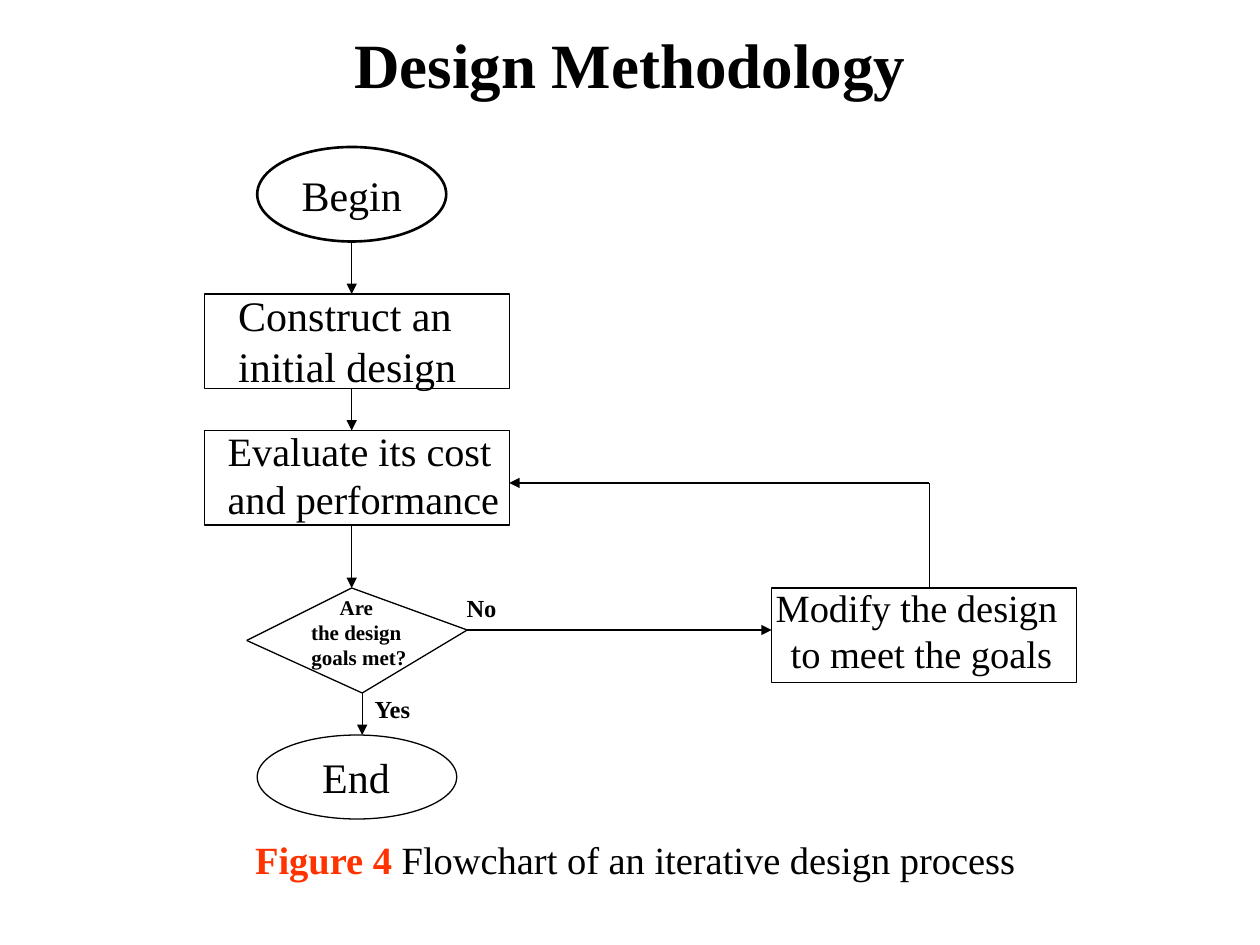
from lxml.etree import SubElement
from pptx import Presentation
from pptx.dml.color import RGBColor
from pptx.enum.shapes import MSO_CONNECTOR, MSO_SHAPE
from pptx.enum.text import MSO_ANCHOR, MSO_AUTO_SIZE, PP_ALIGN
from pptx.oxml.ns import qn
from pptx.util import Emu, Pt

EMU_PER_PX = 9525
BLACK = RGBColor(0x00, 0x00, 0x00)
WHITE = RGBColor(0xFF, 0xFF, 0xFF)
ORANGE_RED = RGBColor(0xFF, 0x33, 0x00)
FONT_NAME = "Times New Roman"


def px(length):
    return Emu(length * EMU_PER_PX)


def format_text(text_frame, size, bold=False, align=PP_ALIGN.LEFT):
    for paragraph in text_frame.paragraphs:
        paragraph.alignment = align
        for run in paragraph.runs:
            run.font.name = FONT_NAME
            run.font.size = Pt(size)
            run.font.bold = bold
            run.font.color.rgb = BLACK


def add_text(slide, box, text, size, bold=False, align=PP_ALIGN.LEFT, wrap=False):
    text_frame = slide.shapes.add_textbox(*map(px, box)).text_frame
    text_frame.text = text
    text_frame.word_wrap = wrap
    text_frame.auto_size = MSO_AUTO_SIZE.SHAPE_TO_FIT_TEXT
    format_text(text_frame, size, bold, align)
    return text_frame


def add_outline(slide, kind, box, line_width=0.75):
    shape = slide.shapes.add_shape(kind, *map(px, box))
    shape.shadow.inherit = False
    shape.fill.background()
    shape.line.color.rgb = BLACK
    shape.line.width = Pt(line_width)
    return shape


def add_line(slide, start, end, arrow=False):
    connector = slide.shapes.add_connector(
        MSO_CONNECTOR.STRAIGHT, *map(px, (*start, *end)))
    connector.line.color.rgb = BLACK
    connector.line.width = Pt(0.75)
    if arrow:
        line = connector.line._get_or_add_ln()
        SubElement(line, qn("a:tailEnd"), type="triangle")
    SubElement(connector._element.spPr, qn("a:effectLst"))


def draw_title(slide, box):
    text_frame = add_text(slide, box, "Design Methodology", 36, True,
                          PP_ALIGN.CENTER, wrap=True)
    text_frame.auto_size = MSO_AUTO_SIZE.NONE
    text_frame.vertical_anchor = MSO_ANCHOR.MIDDLE


def draw_flowchart(slide, left, top):
    def place(x, y, *size):
        return (left + x, top + y, *size)

    # Begin and end
    begin = add_outline(slide, MSO_SHAPE.OVAL, place(40, 0, 144, 72), 1.5)
    begin.fill.solid()
    begin.fill.fore_color.rgb = WHITE
    begin.text_frame.text = "Begin"
    begin.text_frame.word_wrap = False
    begin.text_frame.vertical_anchor = MSO_ANCHOR.MIDDLE
    format_text(begin.text_frame, 24, align=PP_ALIGN.CENTER)
    add_outline(slide, MSO_SHAPE.OVAL, place(40, 448, 152, 64))
    add_text(slide, place(80, 456, 71, 48), "End", 24)

    # Process steps: box corner, text box, wording, size, alignment
    steps = [
        ((0, 112), (16, 104, 190, 86),
         "Construct an\ninitial design", 24, PP_ALIGN.LEFT),
        ((0, 216), (8, 208, 237, 86),
         "Evaluate its cost\nand performance", 23, PP_ALIGN.LEFT),
        ((432, 336), (424, 328, 244, 81),
         "Modify the design \nto meet the goals", 22, PP_ALIGN.CENTER),
    ]
    for corner, text_box, text, size, align in steps:
        add_outline(slide, MSO_SHAPE.RECTANGLE, place(*corner, 232, 72))
        add_text(slide, place(*text_box), text, size, align=align)

    # Decision
    corners = [(32, 376), (112, 336), (200, 368), (120, 416)]
    for start, end in zip(corners, corners[1:] + corners[:1]):
        add_line(slide, place(*start), place(*end))
    add_text(slide, place(71, 336, 93, 68), "Are \nthe design \ngoals met?",
             12, True, PP_ALIGN.CENTER)

    # Arrows down, across and back up to the evaluation
    arrows = [
        ((112, 72), (112, 112)),
        ((112, 184), (112, 216)),
        ((112, 288), (112, 336)),
        ((120, 416), (120, 448)),
        ((200, 368), (432, 368)),
        ((552, 256), (232, 256)),
    ]
    for start, end in arrows:
        add_line(slide, place(*start), place(*end), arrow=True)
    add_line(slide, place(552, 336), place(552, 256))

    # Branch labels
    for x, y, label in [(120, 412, "Yes"), (190, 335, "No")]:
        add_text(slide, place(x, y, 59, 33), label, 14, True, wrap=True)


def draw_caption(slide, box):
    text_frame = add_text(slide, box, "Figure 4", 22, True, PP_ALIGN.CENTER, wrap=True)
    paragraph = text_frame.paragraphs[0]
    paragraph.add_run().text = " Flowchart of an iterative design process"
    format_text(text_frame, 22, align=PP_ALIGN.CENTER)
    label = paragraph.runs[0]
    label.font.bold = True
    label.font.color.rgb = ORANGE_RED


def main():
    presentation = Presentation()
    presentation.slide_width = px(960)
    presentation.slide_height = px(720)
    slide = presentation.slides.add_slide(presentation.slide_layouts[6])
    draw_title(slide, (72, 16, 816, 64))
    draw_flowchart(slide, 156, 112)
    draw_caption(slide, (128, 632, 712, 45))
    presentation.save("out.pptx")


if __name__ == "__main__":
    main()
